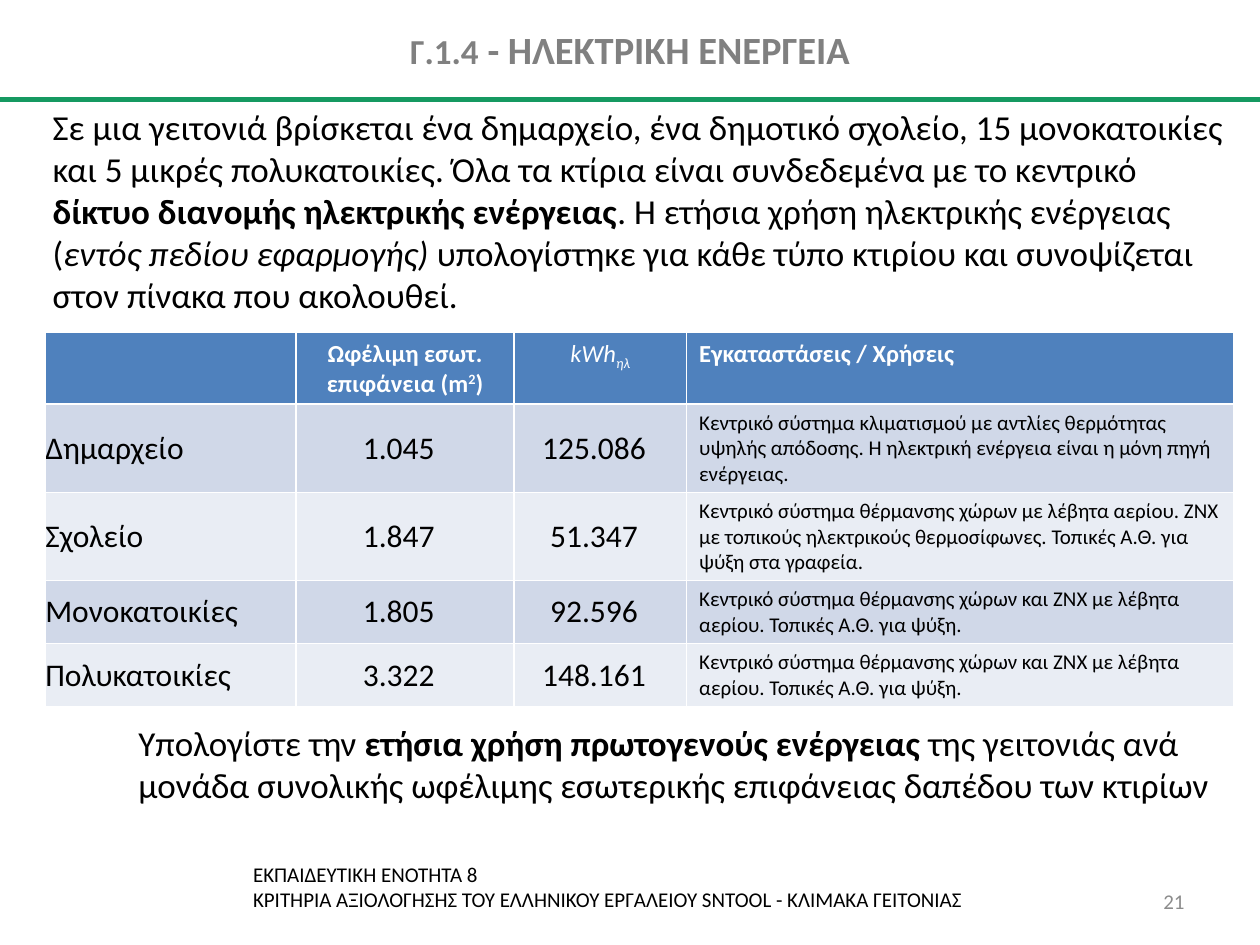
from dataclasses import dataclass
from typing import Optional, Sequence

from lxml import etree
from pptx import Presentation
from pptx.dml.color import RGBColor
from pptx.enum import shapes, text
from pptx.oxml.ns import qn
from pptx.util import Inches, Pt

BLACK = RGBColor(0x00, 0x00, 0x00)
WHITE = RGBColor(0xFF, 0xFF, 0xFF)
TITLE_GRAY = RGBColor(0x80, 0x80, 0x80)
NUMBER_GRAY = RGBColor(0x8C, 0x8C, 0x8C)
GREEN = RGBColor(0x15, 0x99, 0x61)
HEADER_BLUE = RGBColor(0x4F, 0x81, 0xBD)
BAND_FILLS = (RGBColor(0xD0, 0xD8, 0xE8), RGBColor(0xE9, 0xED, 0xF4))

LEFT, CENTER, RIGHT = text.PP_ALIGN.LEFT, text.PP_ALIGN.CENTER, text.PP_ALIGN.RIGHT
TOP, MIDDLE = text.MSO_ANCHOR.TOP, text.MSO_ANCHOR.MIDDLE


@dataclass(frozen=True)
class Span:
    text: str
    bold: Optional[bool] = None
    italic: Optional[bool] = None
    size: Optional[int] = None
    baseline: int = 0  # percent: positive raises, negative lowers


@dataclass(frozen=True)
class Style:
    size: int
    color: RGBColor = BLACK
    bold: bool = False
    align: text.PP_ALIGN = LEFT
    space_after: int = 0


@dataclass(frozen=True)
class Building:
    kind: str
    area: str
    energy: str
    systems: str


LINE_BREAK = Span("\n")
BODY = Style(20, space_after=6)
SMALL = Style(12)
HEADER_CENTER = Style(14, WHITE, True, CENTER)
HEADER_LEFT = Style(14, WHITE, True)

COLUMN_WIDTHS = (1.99, 1.73, 1.37, 4.34)
ROW_HEIGHT = 0.41
HEADERS = (
    ([], HEADER_LEFT),
    ([Span("Ωφέλιμη εσωτ. επιφάνεια (m"), Span("2", baseline=30), Span(")")], HEADER_CENTER),
    ([Span("kWh", False, True), Span("ηλ", False, True, baseline=-25)],
     Style(14, WHITE, False, CENTER, 6)),
    ([Span("Εγκαταστάσεις / Χρήσεις")], HEADER_LEFT),
)
GAS_BOILER = "Κεντρικό σύστημα θέρμανσης χώρων και ΖΝΧ με λέβητα αερίου. Τοπικές Α.Θ. για ψύξη."
BUILDINGS = (
    Building("Δημαρχείο", "1.045", "125.086",
             "Κεντρικό σύστημα κλιματισμού με αντλίες θερμότητας υψηλής απόδοσης. "
             "Η ηλεκτρική ενέργεια είναι η μόνη πηγή ενέργειας."),
    Building("Σχολείο", "1.847", "51.347",
             "Κεντρικό σύστημα θέρμανσης χώρων με λέβητα αερίου. ΖΝΧ με τοπικούς "
             "ηλεκτρικούς θερμοσίφωνες. Τοπικές Α.Θ. για ψύξη στα γραφεία."),
    Building("Μονοκατοικίες", "1.805", "92.596", GAS_BOILER),
    Building("Πολυκατοικίες", "3.322", "148.161", GAS_BOILER),
)


def write(frame, spans: Sequence[Span], style: Style) -> None:
    paragraph = frame.paragraphs[0]
    paragraph.alignment = style.align
    paragraph.space_after = Pt(style.space_after)
    font = paragraph.font
    font.name, font.size, font.bold = "Calibri", Pt(style.size), style.bold
    font.color.rgb = style.color
    for span in spans:
        if span is LINE_BREAK:
            paragraph.add_line_break()
            continue
        run = paragraph.add_run()
        run.text = span.text
        if span.bold is not None:
            run.font.bold = span.bold
        if span.italic is not None:
            run.font.italic = span.italic
        if span.size is not None:
            run.font.size = Pt(span.size)
        if span.baseline:
            run.font._element.set("baseline", str(span.baseline * 1000))


def add_text(slide, left: float, top: float, width: float, height: float,
             spans: Sequence[Span], style: Style, anchor=TOP) -> None:
    box = slide.shapes.add_textbox(Inches(left), Inches(top), Inches(width), Inches(height))
    box.text_frame.word_wrap = True
    box.text_frame.vertical_anchor = anchor
    write(box.text_frame, spans, style)


def add_title_rule(slide) -> None:
    rule = slide.shapes.add_connector(shapes.MSO_CONNECTOR.STRAIGHT,
                                      0, Inches(0.79), Inches(10), Inches(0.79))
    rule.line.color.rgb = GREEN
    rule.line.width = Pt(3)
    etree.SubElement(rule._element.spPr, qn("a:effectLst"))


def fill_cell(cell, spans: Sequence[Span], style: Style, fill: RGBColor) -> None:
    cell.fill.solid()
    cell.fill.fore_color.rgb = fill
    write(cell.text_frame, spans, style)


def add_energy_table(slide) -> None:
    row_count = len(BUILDINGS) + 1
    table = slide.shapes.add_table(
        row_count, len(COLUMN_WIDTHS), Inches(0.36), Inches(2.64),
        Inches(sum(COLUMN_WIDTHS)), Inches(ROW_HEIGHT * row_count)).table
    for column, width in zip(table.columns, COLUMN_WIDTHS):
        column.width = Inches(width)
    for index, (spans, style) in enumerate(HEADERS):
        fill_cell(table.cell(0, index), spans, style, HEADER_BLUE)
    for row, building in enumerate(BUILDINGS, start=1):
        fill = BAND_FILLS[(row - 1) % 2]
        figures = ((building.kind, LEFT), (building.area, CENTER), (building.energy, CENTER))
        for index, (value, align) in enumerate(figures):
            cell = table.cell(row, index)
            cell.margin_left = 0
            cell.vertical_anchor = MIDDLE
            fill_cell(cell, [Span(value)], Style(18, align=align), fill)
        fill_cell(table.cell(row, 3), [Span(building.systems)], SMALL, fill)


def main() -> None:
    presentation = Presentation()
    presentation.slide_width, presentation.slide_height = Inches(10), Inches(7.5)
    slide = presentation.slides.add_slide(presentation.slide_layouts[6])

    add_title_rule(slide)
    add_text(slide, 1.91, 6.79, 6.79, 0.5, [
        Span("ΕΚΠΑΙΔΕΥΤΙΚΗ ΕΝΟΤΗΤΑ 8"),
        LINE_BREAK,
        Span("ΚΡΙΤΗΡΙΑ ΑΞΙΟΛΟΓΗΣΗΣ ΤΟΥ ΕΛΛΗΝΙΚΟΥ ΕΡΓΑΛΕΙΟΥ SNTOOL - ΚΛΙΜΑΚΑ ΓΕΙΤΟΝΙΑΣ"),
    ], SMALL)
    add_text(slide, 8.83, 6.95, 0.67, 0.4, [Span("21")],
             Style(12, NUMBER_GRAY, align=RIGHT), MIDDLE)
    add_text(slide, 0, 0, 10, 0.78,
             [Span("Γ.1.4", size=20), Span(" - ΗΛΕΚΤΡΙΚΗ ΕΝΕΡΓΕΙΑ")],
             Style(22, TITLE_GRAY, True, CENTER), MIDDLE)
    add_text(slide, 0.32, 0.79, 9.5, 2.19, [
        Span("Σε μια γειτονιά βρίσκεται ένα δημαρχείο, ένα δημοτικό σχολείο, "
             "15 μονοκατοικίες και 5 μικρές πολυκατοικίες. Όλα τα κτίρια είναι "
             "συνδεδεμένα με το κεντρικό"),
        Span(" δίκτυο διανομής ηλεκτρικής ενέργειας", bold=True),
        Span(". Η ετήσια χρήση ηλεκτρικής ενέργειας ("),
        Span("εντός πεδίου εφαρμογής)", italic=True),
        Span(" υπολογίστηκε για κάθε τύπο κτιρίου και συνοψίζεται στον πίνακα "
             "που ακολουθεί."),
    ], BODY)
    add_energy_table(slide)
    add_text(slide, 1, 5.68, 8.78, 0.53, [
        Span("Υπολογίστε την "),
        Span("ετήσια χρήση πρωτογενούς ενέργειας ", bold=True),
        Span("της γειτονιάς ανά μονάδα συνολικής ωφέλιμης εσωτερικής επιφάνειας "
             "δαπέδου των κτιρίων"),
    ], BODY)

    presentation.save("out.pptx")


if __name__ == "__main__":
    main()
